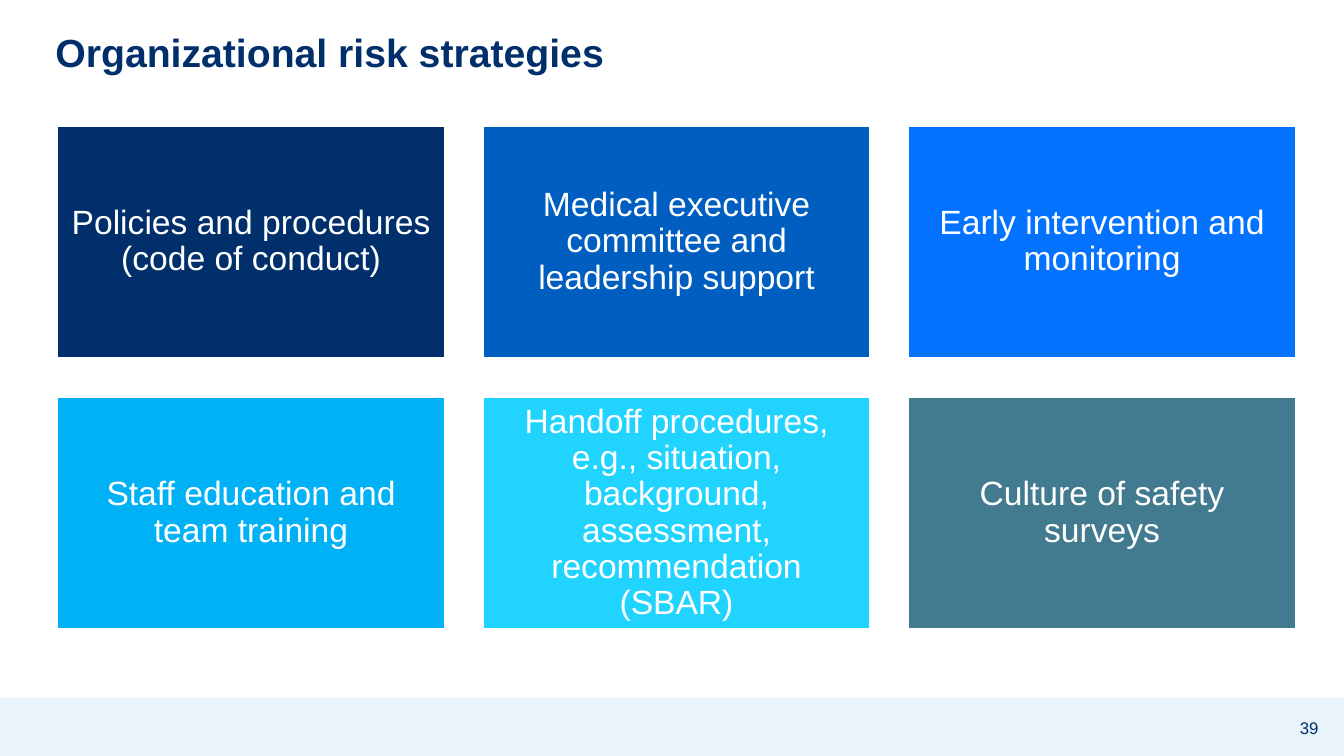
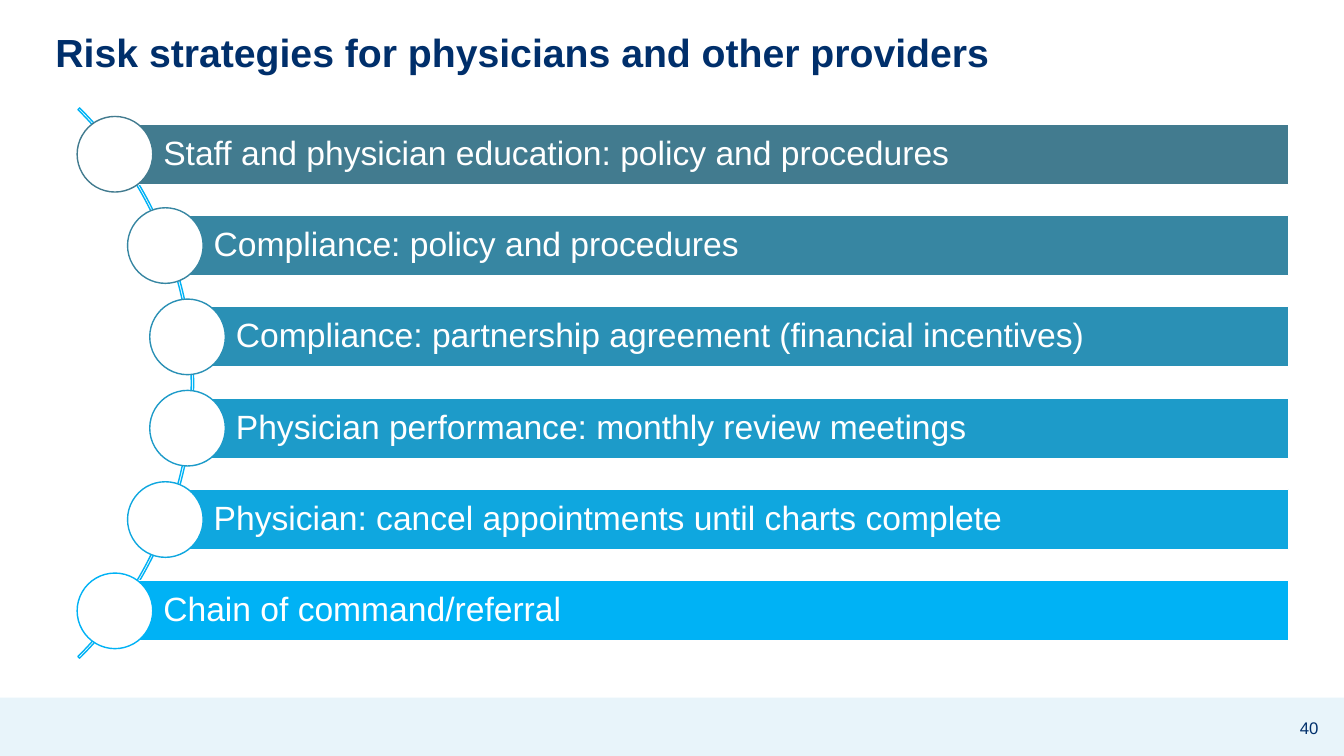
from pptx import Presentation
from pptx.dml.color import RGBColor
from pptx.enum.shapes import MSO_SHAPE
from pptx.enum.text import MSO_ANCHOR, MSO_AUTO_SIZE, PP_ALIGN
from pptx.util import Inches, Pt

RECTANGLE, OVAL, BLOCK_ARC = MSO_SHAPE.RECTANGLE, MSO_SHAPE.OVAL, MSO_SHAPE.BLOCK_ARC
LEFT, CENTER = PP_ALIGN.LEFT, PP_ALIGN.CENTER
MIDDLE = MSO_ANCHOR.MIDDLE
NO_AUTOFIT = MSO_AUTO_SIZE.NONE

FONT = "Arial"
WHITE = RGBColor(0xFF, 0xFF, 0xFF)
NAVY = RGBColor(0x00, 0x2F, 0x6B)
ROYAL = RGBColor(0x00, 0x5E, 0xC0)
BRIGHT = RGBColor(0x03, 0x73, 0xFF)
SKY = RGBColor(0x00, 0xB2, 0xF5)
CYAN = RGBColor(0x21, 0xD3, 0xFF)
TEAL = RGBColor(0x42, 0x7B, 0x8F)
PALE = RGBColor(0xE8, 0xF4, 0xFA)

SLIDE_WIDTH, SLIDE_HEIGHT = 13.33, 7.5
BAND_TOP = 6.92

# Content
FIRST_NUMBER = 39
ORGANIZATION_TITLE = "Organizational risk strategies"
TILES = [
    ("Policies and procedures (code of conduct)", NAVY),
    ("Medical executive committee and leadership support", ROYAL),
    ("Early intervention and monitoring", BRIGHT),
    ("Staff education and team training", SKY),
    ("Handoff procedures, e.g., situation, background, assessment, recommendation (SBAR)", CYAN),
    ("Culture of safety surveys", TEAL),
]
PROVIDER_TITLE = "Risk strategies for physicians and other providers"
# Text, colour, horizontal centre of the circle
BARS = [
    ("Staff and physician education: policy and procedures", TEAL, 1.14),
    ("Compliance: policy and procedures", RGBColor(0x37, 0x86, 0xA2), 1.64),
    ("Compliance: partnership agreement (financial incentives)", RGBColor(0x2A, 0x90, 0xB5), 1.86),
    ("Physician performance: monthly review meetings", RGBColor(0x1D, 0x9B, 0xC9), 1.86),
    ("Physician: cancel appointments until charts complete", RGBColor(0x0F, 0xA7, 0xDF), 1.64),
    ("Chain of command/referral", SKY, 1.14),
]

# Tile grid
TILE_COLUMNS = 3
TILE_LEFT, TILE_TOP = 0.57, 1.25
TILE_WIDTH, TILE_HEIGHT = 3.84, 2.3
TILE_PITCH_X, TILE_PITCH_Y = 4.22, 2.69

# Curved list
FIRST_CENTER, LAST_CENTER = 1.53, 6.06
BAR_RIGHT, BAR_HEIGHT = 12.78, 0.6
CIRCLE_SIZE = 0.75
ARC_LEFT, ARC_TOP, ARC_SIZE = -5.8, -0.06, 7.72
ARC_ADJUSTMENTS = (189, 27, 0.003)


def write_text(shape, text, size=24, color=WHITE, bold=False, align=LEFT,
               spacing=0.9, insets=(0.1, 0.05, 0.1, 0.05)):
    frame = shape.text_frame
    frame.word_wrap = True
    frame.auto_size = NO_AUTOFIT
    frame.vertical_anchor = MIDDLE
    (frame.margin_left, frame.margin_top,
     frame.margin_right, frame.margin_bottom) = map(Inches, insets)
    paragraph = frame.paragraphs[0]
    paragraph.text = text
    paragraph.alignment = align
    paragraph.line_spacing = spacing
    font = paragraph.font
    font.name, font.size, font.bold = FONT, Pt(size), bold
    font.color.rgb = color


def add_box(slide, kind, left, top, width, height, fill=None, line=None):
    shape = slide.shapes.add_shape(kind, *map(Inches, (left, top, width, height)))
    shape.shadow.inherit = False
    if fill is None:
        shape.fill.background()
    else:
        shape.fill.solid()
        shape.fill.fore_color.rgb = fill
    if line is None:
        shape.line.fill.background()
    else:
        shape.line.color.rgb = line
        shape.line.width = Pt(1)
    return shape


def prepare_layout(presentation):
    """Place the title and move the footer band into the shared layout."""
    layout = presentation.slide_layouts.get_by_name("Title Only")
    title = next(shape for shape in layout.placeholders
                 if shape.placeholder_format.idx == 0)
    title.left, title.top, title.width, title.height = map(Inches, (0.45, 0.15, 12.09, 0.78))
    return layout


def add_slide(presentation, layout, title, number):
    slide = presentation.slides.add_slide(layout)
    write_text(slide.shapes.title, title, size=28, color=NAVY, bold=True)
    number_box = slide.shapes.add_textbox(*map(Inches, (12.68, 7.02, 0.61, 0.4)))
    write_text(number_box, str(number), size=12, color=NAVY, align=CENTER, spacing=1)
    return slide


def add_band(slide, layout):
    band = add_box(slide, RECTANGLE, 0, BAND_TOP, SLIDE_WIDTH, SLIDE_HEIGHT - BAND_TOP, PALE)
    layout.shapes.element.insert(2, band.element)


def add_tiles(slide):
    for index, (text, color) in enumerate(TILES):
        row, column = divmod(index, TILE_COLUMNS)
        tile = add_box(slide, RECTANGLE,
                       TILE_LEFT + column * TILE_PITCH_X, TILE_TOP + row * TILE_PITCH_Y,
                       TILE_WIDTH, TILE_HEIGHT, color, WHITE)
        write_text(tile, text, align=CENTER, insets=(0.1, 0.1, 0.1, 0.1))


def add_curved_list(slide):
    arc = add_box(slide, BLOCK_ARC, ARC_LEFT, ARC_TOP, ARC_SIZE, ARC_SIZE, line=SKY)
    for index, value in enumerate(ARC_ADJUSTMENTS):
        arc.adjustments[index] = value
    pitch = (LAST_CENTER - FIRST_CENTER) / (len(BARS) - 1)
    for index, (text, color, center_x) in enumerate(BARS):
        center_y = FIRST_CENTER + index * pitch
        bar = add_box(slide, RECTANGLE, center_x, center_y - BAR_HEIGHT / 2,
                      BAR_RIGHT - center_x, BAR_HEIGHT, color, WHITE)
        write_text(bar, text, insets=(0.48, 0.07, 0.07, 0.07))
        add_box(slide, OVAL, center_x - CIRCLE_SIZE / 2, center_y - CIRCLE_SIZE / 2,
                CIRCLE_SIZE, CIRCLE_SIZE, WHITE, color)


def main():
    presentation = Presentation()
    presentation.slide_width = Inches(SLIDE_WIDTH)
    presentation.slide_height = Inches(SLIDE_HEIGHT)
    layout = prepare_layout(presentation)

    # Organizational strategies
    slide = add_slide(presentation, layout, ORGANIZATION_TITLE, FIRST_NUMBER)
    add_band(slide, layout)
    add_tiles(slide)

    # Provider strategies
    slide = add_slide(presentation, layout, PROVIDER_TITLE, FIRST_NUMBER + 1)
    add_curved_list(slide)

    presentation.save("out.pptx")


if __name__ == "__main__":
    main()
